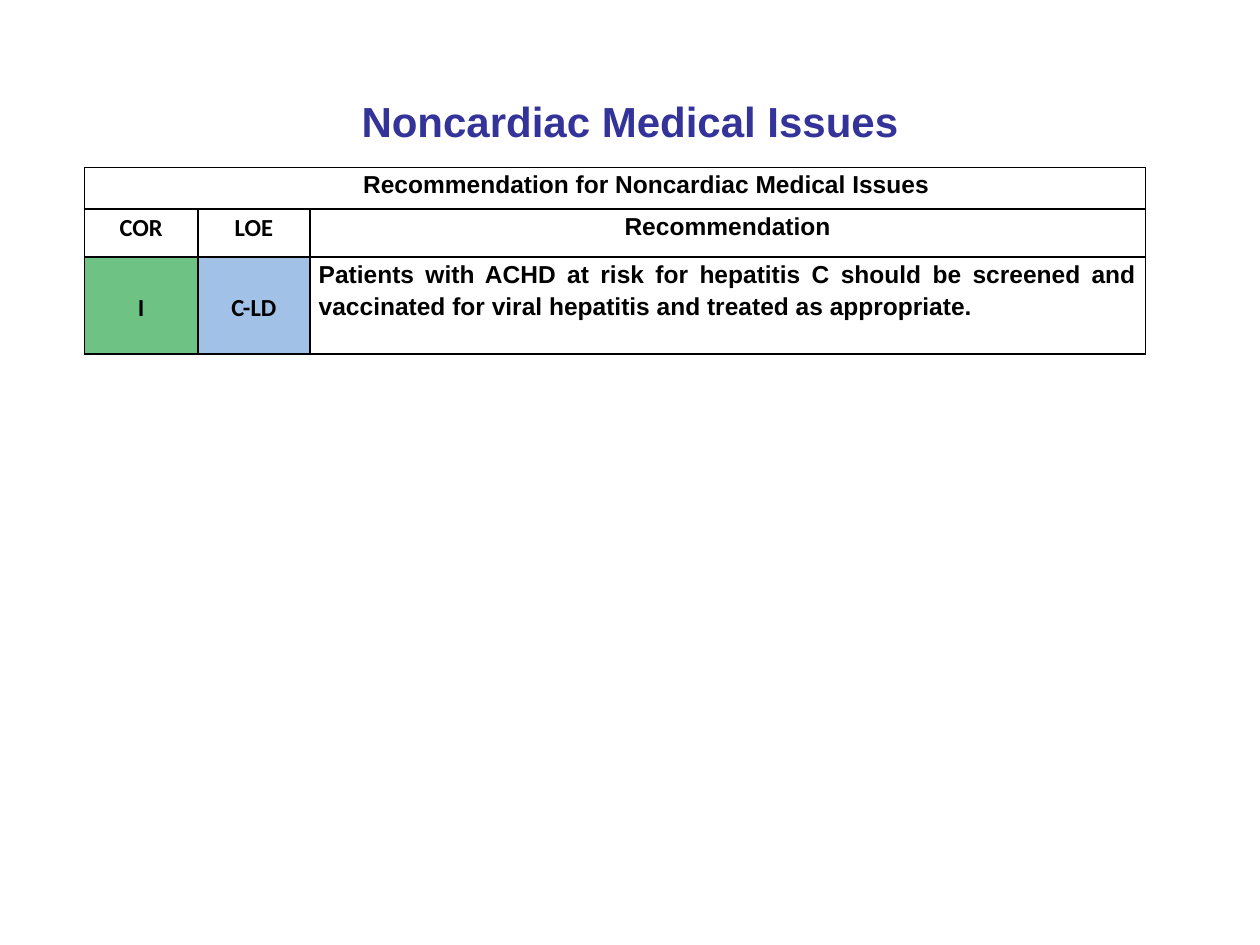
import pptx
import pptx.dml.color
import pptx.enum.text
import pptx.oxml
import pptx.oxml.ns
import pptx.util

Inches, Pt = pptx.util.Inches, pptx.util.Pt
RGB = pptx.dml.color.RGBColor.from_string
ALIGN = pptx.enum.text.PP_ALIGN
ANCHOR = pptx.enum.text.MSO_ANCHOR

THEME = {
    "title": "333399", "text": "000000", "border": "000000",
    "COR": "6EC284", "LOE": "A1C1E7",
    "title_size": 24, "table_size": 14, "border_width": 1,
    "font": "Arial", "code_font": "Calibri",
}

TITLE = "Noncardiac Medical Issues"
HEADING = "\tRecommendation for Noncardiac Medical Issues"
COLUMNS = ["COR", "LOE", "Recommendation"]
RECOMMENDATIONS = [
    ["I", "C-LD", "Patients with ACHD at risk for hepatitis C should be screened "
     "and vaccinated for viral hepatitis and treated as appropriate."],
]
COL_WIDTHS = [0.9, 0.89, 6.63]
ROW_HEIGHTS = [0.33, 0.38, 0.77]


def format_text(p, font, size, color, align):
    p.alignment = align
    for r in p.runs:
        r.font.name = font
        r.font.size = Pt(size)
        r.font.bold = True
        r.font.color.rgb = RGB(color)


def add_borders(cell):
    tcPr = cell._tc.get_or_add_tcPr()
    for side in ("lnL", "lnR", "lnT", "lnB"):
        tcPr.append(pptx.oxml.parse_xml(
            f'<a:{side} {pptx.oxml.ns.nsdecls("a")} w="{Pt(THEME["border_width"])}">'
            f'<a:solidFill><a:srgbClr val="{THEME["border"]}"/></a:solidFill></a:{side}>'))


def fill_cell(cell, text, font, align=ALIGN.CENTER, fill=None, anchor=ANCHOR.TOP):
    cell.margin_left = cell.margin_right = Inches(0.07)
    cell.margin_top = cell.margin_bottom = 0
    cell.vertical_anchor = anchor
    add_borders(cell)
    if fill:
        cell.fill.solid()
        cell.fill.fore_color.rgb = RGB(fill)
    else:
        cell.fill.background()
    p = cell.text_frame.paragraphs[0]
    p.text = text
    p.line_spacing = 1.15
    format_text(p, font, THEME["table_size"], THEME["text"], align)


def add_title(s):
    sp = s.shapes.title
    sp.left, sp.top, sp.width, sp.height = map(Inches, (0.5, 0.33, 9, 1.25))
    tf = sp.text_frame
    tf.text = TITLE
    tf.vertical_anchor = ANCHOR.MIDDLE
    format_text(tf.paragraphs[0], THEME["font"], THEME["title_size"],
                THEME["title"], ALIGN.CENTER)


def add_recommendations(s):
    table = s.shapes.add_table(
        len(ROW_HEIGHTS), len(COL_WIDTHS), Inches(0.67), Inches(1.33),
        Inches(sum(COL_WIDTHS)), Inches(sum(ROW_HEIGHTS))).table
    table.first_row = table.horz_banding = False
    for col, width in zip(table.columns, COL_WIDTHS):
        col.width = Inches(width)
    for row, height in zip(table.rows, ROW_HEIGHTS):
        row.height = Inches(height)

    table.cell(0, 0).merge(table.cell(0, len(COLUMNS) - 1))
    for c, name in enumerate(COLUMNS):
        is_code = name in THEME
        font = THEME["code_font"] if is_code else THEME["font"]
        fill_cell(table.cell(0, c), "" if c else HEADING, THEME["font"])
        fill_cell(table.cell(1, c), name, font)
        for r, values in enumerate(RECOMMENDATIONS, 2):
            fill_cell(table.cell(r, c), values[c], font,
                      ALIGN.CENTER if is_code else ALIGN.JUSTIFY,
                      THEME.get(name),
                      ANCHOR.MIDDLE if is_code else ANCHOR.TOP)


def main():
    prs = pptx.Presentation()
    prs.slide_width, prs.slide_height = Inches(10), Inches(7.5)
    s = prs.slides.add_slide(prs.slide_layouts[5])
    add_title(s)
    add_recommendations(s)
    prs.save("out.pptx")


if __name__ == "__main__":
    main()
